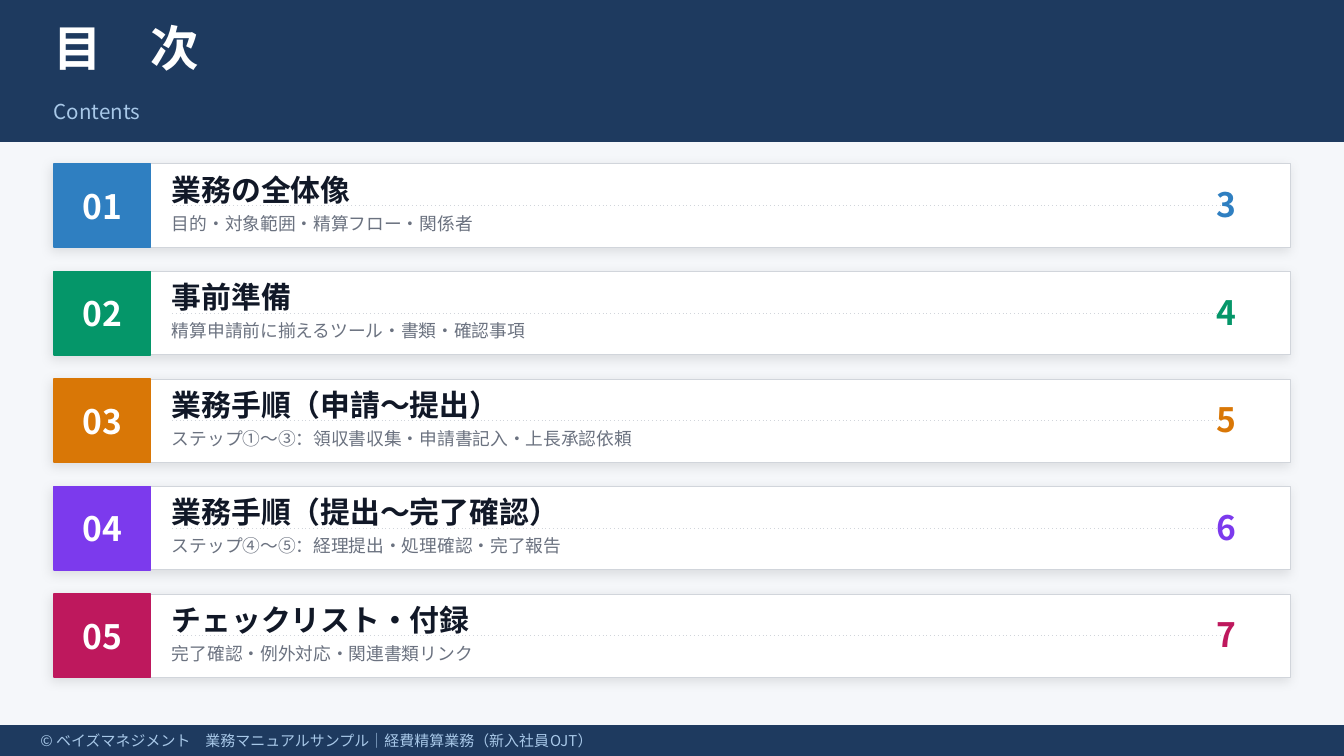
import pptx
import pptx.dml.color
import pptx.enum.shapes
import pptx.enum.text
import pptx.oxml.ns
import pptx.util
from lxml import etree

RGBColor = pptx.dml.color.RGBColor
NAVY = RGBColor(0x1E, 0x3A, 0x5F)
PALE_BLUE = RGBColor(0xA8, 0xC8, 0xE8)
WHITE = RGBColor(0xFF, 0xFF, 0xFF)
PAPER = RGBColor(0xF5, 0xF7, 0xFA)
BORDER = RGBColor(0xD1, 0xD5, 0xDB)
INK = RGBColor(0x11, 0x18, 0x27)
GRAY = RGBColor(0x6B, 0x72, 0x80)
BLUE = RGBColor(0x2F, 0x7F, 0xC1)
GREEN = RGBColor(0x05, 0x96, 0x69)
ORANGE = RGBColor(0xD9, 0x77, 0x06)
PURPLE = RGBColor(0x7C, 0x3A, 0xED)
PINK = RGBColor(0xBE, 0x18, 0x5D)

FONT = "Noto Sans CJK JP"
PX = 9144
WIDTH = 1000
FIRST_TOP, ROW_STEP, ROW_HEIGHT = 122, 80, 62
FIRST_PAGE = 3
LEFT = pptx.enum.text.PP_ALIGN.LEFT
CENTER = pptx.enum.text.PP_ALIGN.CENTER
RIGHT = pptx.enum.text.PP_ALIGN.RIGHT

CHAPTERS = [
    ("業務の全体像", "目的・対象範囲・精算フロー・関係者", BLUE),
    ("事前準備", "精算申請前に揃えるツール・書類・確認事項", GREEN),
    ("業務手順（申請〜提出）", "ステップ①〜③：領収書収集・申請書記入・上長承認依頼", ORANGE),
    ("業務手順（提出〜完了確認）", "ステップ④〜⑤：経理提出・処理確認・完了報告", PURPLE),
    ("チェックリスト・付録", "完了確認・例外対応・関連書類リンク", PINK),
]


def add_child(parent, tag, **attributes):
    """Append a DrawingML element to a parent and return it."""
    return etree.SubElement(parent, pptx.oxml.ns.qn(tag), **attributes)


def write_text(para, text, *, size, color, bold=False, align=LEFT):
    """Write one formatted span into a paragraph."""
    para.alignment = align
    span = para.add_run()
    span.text = text
    span.font.size = pptx.util.Pt(size)
    span.font.bold = bold
    span.font.color.rgb = color
    span.font.name = FONT
    add_child(span.font._element, "a:ea", typeface=FONT)


class ContentsPage:
    """Draws styled elements on the current slide."""

    def __init__(self, slide):
        """Keep the slide and paint its background."""
        self.slide = slide
        slide.background.fill.solid()
        slide.background.fill.fore_color.rgb = PAPER

    def panel(self, left, top, width, height, fill, line=None, line_width=1, shadow=False):
        """Add a filled rectangle, optionally with a soft shadow."""
        box = self.slide.shapes.add_shape(
            pptx.enum.shapes.MSO_SHAPE.RECTANGLE,
            left * PX, top * PX, width * PX, height * PX)
        box.fill.solid()
        box.fill.fore_color.rgb = fill
        box.line.color.rgb = line or fill
        box.line.width = pptx.util.Pt(line_width)
        box.shadow.inherit = False
        if shadow:
            effects = box._element.spPr.find(pptx.oxml.ns.qn("a:effectLst"))
            outer = add_child(
                effects, "a:outerShdw", blurRad=str(pptx.util.Pt(6)),
                dist=str(pptx.util.Pt(2)), dir=str(135 * 60000),
                algn="bl", rotWithShape="0")
            tint = add_child(outer, "a:srgbClr", val="000000")
            add_child(tint, "a:alpha", val="10000")

    def label(self, left, top, width, height, text, **style):
        """Add a text box without insets, centred vertically."""
        box = self.slide.shapes.add_textbox(left * PX, top * PX, width * PX, height * PX)
        frame = box.text_frame
        frame.word_wrap = True
        frame.vertical_anchor = pptx.enum.text.MSO_ANCHOR.MIDDLE
        frame.margin_left = frame.margin_top = frame.margin_right = frame.margin_bottom = 0
        write_text(frame.paragraphs[0], text, **style)

    def dotted_line(self, left, right, top):
        """Add a thin horizontal dotted line."""
        leader = self.slide.shapes.add_connector(
            pptx.enum.shapes.MSO_CONNECTOR.STRAIGHT,
            left * PX, top * PX, right * PX, top * PX)
        leader.line.color.rgb = BORDER
        leader.line.width = pptx.util.Pt(0.5)
        properties = leader._element.spPr
        add_child(properties.find(pptx.oxml.ns.qn("a:ln")), "a:prstDash", val="dot")
        add_child(properties, "a:effectLst")

    def chapter(self, index, title, summary, color):
        """Add one row of the table of contents."""
        top = FIRST_TOP + index * ROW_STEP
        self.panel(40, top, 920, ROW_HEIGHT, WHITE, BORDER, 0.5, shadow=True)
        self.panel(40, top, 72, ROW_HEIGHT, color)
        self.label(41, top + 10, 70, 42, f"{index + 1:02}",
                   size=18, color=WHITE, bold=True, align=CENTER)
        self.label(128, top + 4, 550, 30, title, size=16, color=INK, bold=True)
        self.label(128, top + 33, 700, 22, summary, size=9.5, color=GRAY)
        self.dotted_line(128, 908, top + 31)
        self.label(830, top + 10, 90, 40, str(FIRST_PAGE + index),
                   size=18, color=color, bold=True, align=RIGHT)


def main():
    """Build and save the contents slide."""
    deck = pptx.Presentation()
    deck.slide_width = WIDTH * PX
    deck.slide_height = deck.slide_width * 9 // 16
    page = ContentsPage(deck.slides.add_slide(deck.slide_layouts[6]))
    page.panel(0, 0, WIDTH, 105, NAVY)
    page.label(40, 5, 800, 60, "目　次", size=26, color=WHITE, bold=True)
    page.label(40, 65, 800, 35, "Contents", size=11, color=PALE_BLUE)
    page.panel(0, 540, WIDTH, 23, NAVY)
    page.label(30, 541, 940, 20,
               "© ベイズマネジメント　業務マニュアルサンプル｜経費精算業務（新入社員OJT）",
               size=8, color=PALE_BLUE)
    for index, (title, summary, color) in enumerate(CHAPTERS):
        page.chapter(index, title, summary, color)
    deck.save("out.pptx")


if __name__ == "__main__":
    main()
